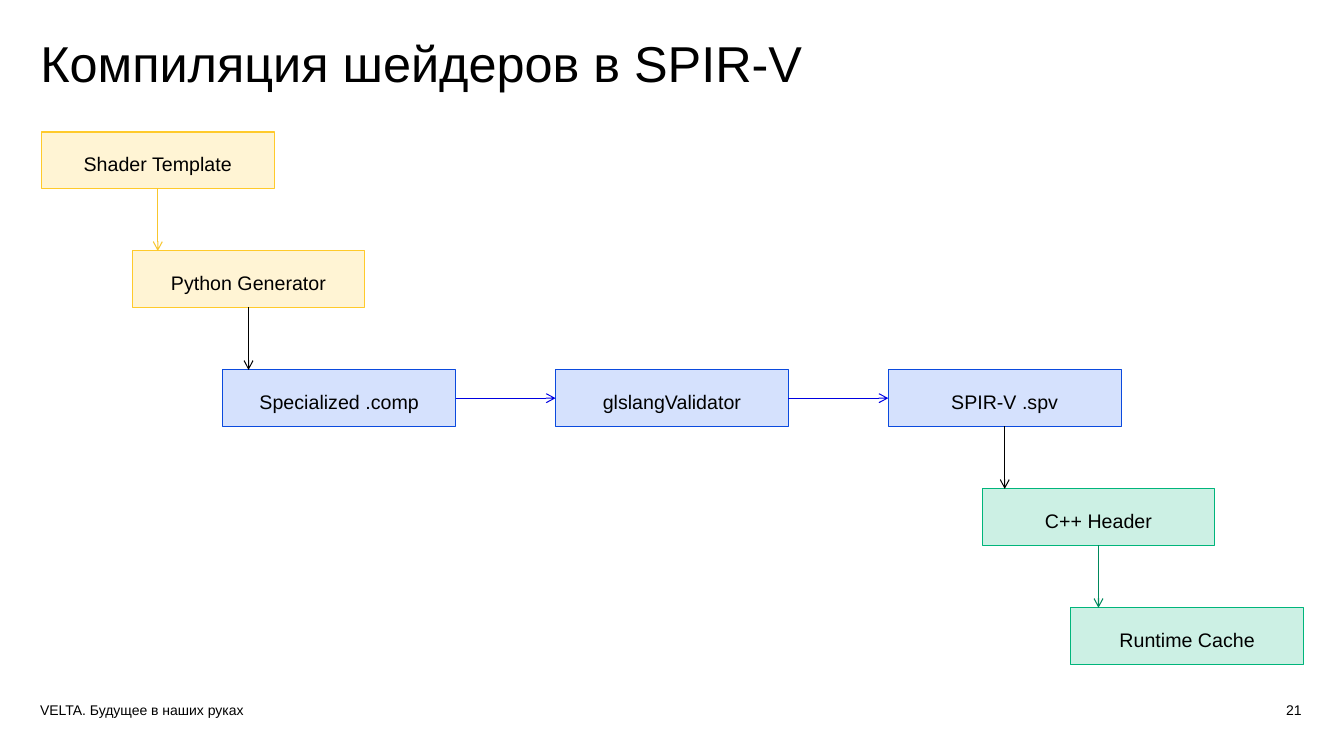
from lxml.etree import SubElement
from pptx import Presentation
from pptx.dml.color import RGBColor
from pptx.enum.shapes import MSO_CONNECTOR, MSO_SHAPE
from pptx.enum.text import MSO_ANCHOR, PP_ALIGN
from pptx.oxml.ns import qn
from pptx.util import Inches, Pt

# Content
TITLE = "Компиляция шейдеров в SPIR-V"
FOOTER = "VELTA. Будущее в наших руках"
PAGE = "21"
FONT, BLACK = "Arial", "000000"

# Stage family: fill, opacity in percent, outline
FAMILIES = {
    "template": ("FFCA2B", 20, "FFCA2B"),
    "compile": ("D5E1FD", 100, "0B4ADE"),
    "runtime": ("00B57B", 20, "00B57B"),
}
# Stage: label, left edge in inches, row, family, colour of the arrow to the next
STAGES = [
    ("Shader Template", 0.41, 0, "template", "F8C62D"),
    ("Python Generator", 1.31, 1, "template", BLACK),
    ("Specialized .comp", 2.21, 2, "compile", "0000E1"),
    ("glslangValidator", 5.51, 2, "compile", "0000E1"),
    ("SPIR-V .spv", 8.81, 2, "compile", BLACK),
    ("C++ Header", 9.74, 3, "runtime", "00885C"),
    ("Runtime Cache", 10.62, 4, "runtime", None),
]

# Grid, in inches
TOP, ROW_STEP = 1.31, 1.18
STAGE_W, STAGE_H = 2.31, 0.56
TOP_SITE, LEFT_SITE, BOTTOM_SITE, RIGHT_SITE = range(4)


def color(hex_code):
    return RGBColor.from_string(hex_code)


def write(shape, text, size, align, insets, wrap=True):
    frame = shape.text_frame
    frame.word_wrap = wrap
    frame.vertical_anchor = MSO_ANCHOR.TOP
    (frame.margin_left, frame.margin_top,
     frame.margin_right, frame.margin_bottom) = map(Inches, insets)
    paragraph = frame.paragraphs[0]
    paragraph.alignment = align
    run = paragraph.add_run()
    run.text = text
    run.font.name, run.font.size = FONT, Pt(size)
    run.font.color.rgb = color(BLACK)
    return paragraph


def add_stage(slide, label, left, row, family):
    fill, opacity, outline = FAMILIES[family]
    stage = slide.shapes.add_shape(
        MSO_SHAPE.RECTANGLE, Inches(left), Inches(TOP + row * ROW_STEP),
        Inches(STAGE_W), Inches(STAGE_H))
    stage.shadow.inherit = False
    stage.fill.solid()
    stage.fill.fore_color.rgb = color(fill)
    if opacity < 100:
        tint = stage.fill._xPr.find(qn("a:solidFill"))[0]
        SubElement(tint, qn("a:alpha"), val=str(opacity * 1000))
    stage.line.color.rgb = color(outline)
    stage.line.width = Pt(0.75)
    write(stage, label, 14, PP_ALIGN.CENTER, (0.2, 0.2, 0.2, 0.2))
    return stage


def add_arrow(slide, source, target, line_color):
    same_row = source.top == target.top
    if same_row:
        x1, x2 = source.left + source.width, target.left
        y1 = y2 = source.top + source.height // 2
    else:
        x1 = x2 = source.left + source.width // 2
        y1, y2 = source.top + source.height, target.top
    arrow = slide.shapes.add_connector(MSO_CONNECTOR.STRAIGHT, x1, y1, x2, y2)
    arrow.begin_connect(source, RIGHT_SITE if same_row else BOTTOM_SITE)
    if same_row:
        arrow.end_connect(target, LEFT_SITE)
    arrow.line.color.rgb = color(line_color)
    arrow.line.width = Pt(0.75)
    SubElement(arrow.line._get_or_add_ln(), qn("a:tailEnd"), type="arrow")
    SubElement(arrow._element.spPr, qn("a:effectLst"))


def main():
    deck = Presentation()
    deck.slide_width, deck.slide_height = Inches(13.33), Inches(7.5)
    slide = deck.slides.add_slide(deck.slide_layouts[5])

    # Title
    title = slide.shapes.title
    title.left, title.top = Inches(0.4), Inches(0.34)
    title.width, title.height = Inches(10.9), Inches(0.83)
    heading = write(title, TITLE, 36, PP_ALIGN.LEFT, (0, 0.05, 0.1, 0.05))
    heading.line_spacing = 0.9

    # Pipeline stages, then the arrows between neighbours
    stages = [add_stage(slide, *stage[:4]) for stage in STAGES]
    for source, target, stage in zip(stages, stages[1:], STAGES):
        add_arrow(slide, source, target, stage[4])

    # Footer and page number
    footer = slide.shapes.add_textbox(
        Inches(0.3), Inches(6.91), Inches(2.3), Inches(0.27))
    write(footer, FOOTER, 10, PP_ALIGN.LEFT, (0.1, 0.05, 0.1, 0.05), wrap=False)
    page = slide.shapes.add_textbox(
        Inches(9.61), Inches(6.91), Inches(3.3), Inches(0.4))
    write(page, PAGE, 10, PP_ALIGN.RIGHT, (0.1, 0.05, 0, 0.05))

    deck.save("out.pptx")


if __name__ == "__main__":
    main()
